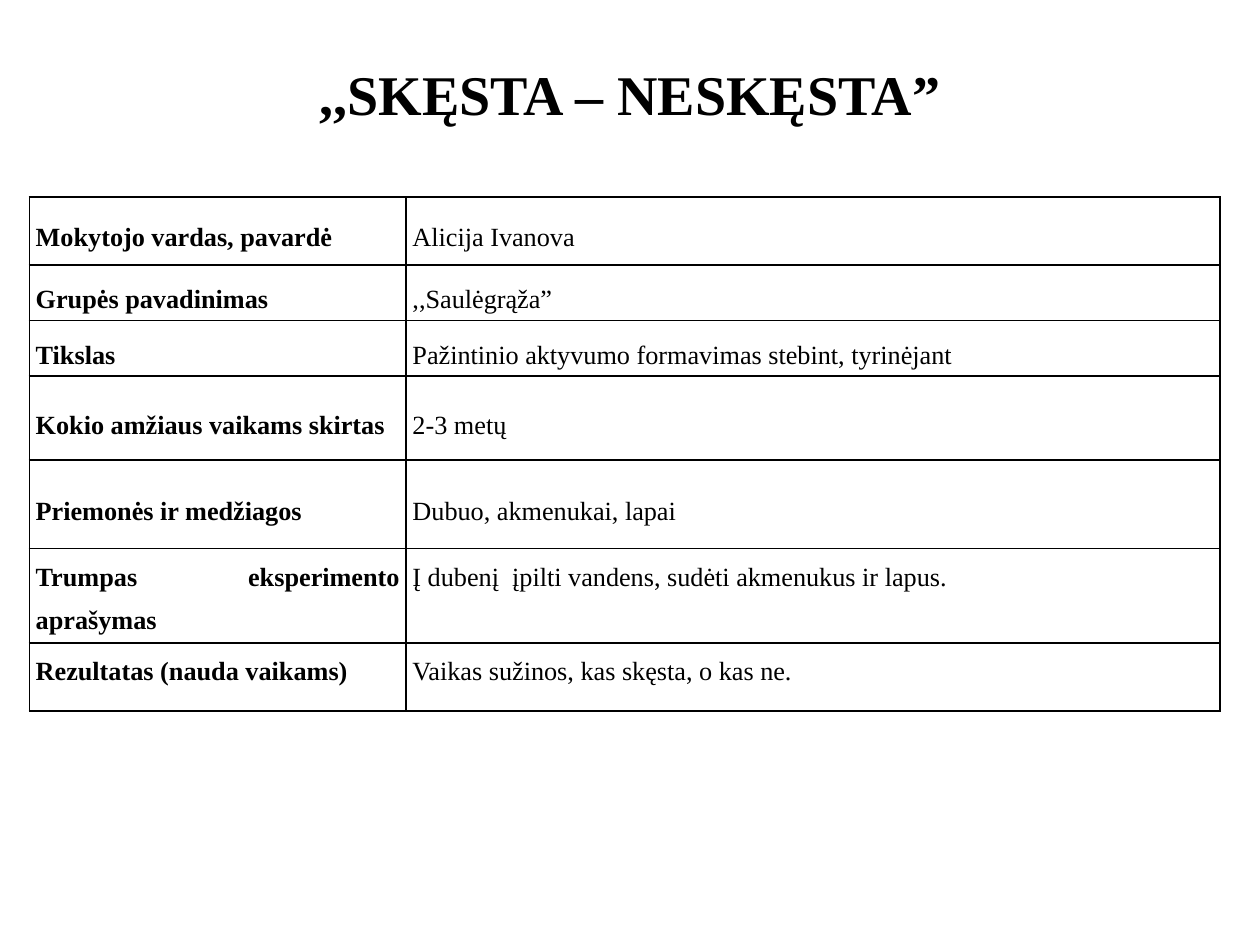
import dataclasses

import pptx
import pptx.dml.color
import pptx.enum.text
import pptx.oxml
import pptx.oxml.ns
import pptx.util

Pt = pptx.util.Pt
Align = pptx.enum.text.PP_ALIGN
Anchor = pptx.enum.text.MSO_ANCHOR
FONT = "Times New Roman"
BLACK = "000000"
WHITE = "FFFFFF"
WIDTHS = (215.3, 465.1)


@dataclasses.dataclass
class Row:
    label: str
    value: str
    height: float
    anchor: Anchor = Anchor.MIDDLE


ROWS = [
    Row("Mokytojo vardas, pavardė", "Alicija Ivanova", 38.9),
    Row("Grupės pavadinimas", ",,Saulėgrąža”", 31.7),
    Row("Tikslas", "Pažintinio aktyvumo formavimas stebint, tyrinėjant", 31.7),
    Row("Kokio amžiaus vaikams skirtas", "2-3 metų", 48.2),
    Row("Priemonės ir medžiagos", "Dubuo, akmenukai, lapai", 50.4),
    Row("Trumpas eksperimento aprašymas",
        "Į dubenį  įpilti vandens, sudėti akmenukus ir lapus.", 54, Anchor.TOP),
    Row("Rezultatas (nauda vaikams)",
        "Vaikas sužinos, kas skęsta, o kas ne.", 38.9, Anchor.TOP),
]


def color(code: str) -> pptx.dml.color.RGBColor:
    return pptx.dml.color.RGBColor.from_string(code)


def add_run(para, text: str, size: float, bold: bool) -> None:
    run = para.add_run()
    run.text = text
    run.font.name = FONT
    run.font.size = Pt(size)
    run.font.bold = bold
    run.font.color.rgb = color(BLACK)


def add_lines(cell) -> None:
    """Draw a thin line on each side; lines come before the fill."""
    props = cell._tc.get_or_add_tcPr()
    for place, side in enumerate(("lnL", "lnR", "lnT", "lnB")):
        line = pptx.oxml.parse_xml(
            f'<a:{side} {pptx.oxml.ns.nsdecls("a")} w="{Pt(1)}"><a:solidFill>'
            f'<a:srgbClr val="{BLACK}"/></a:solidFill></a:{side}>')
        props.insert(place, line)


def fill_cell(cell, text: str, bold: bool, anchor: Anchor) -> None:
    cell.margin_left = cell.margin_right = Pt(3.6)
    cell.margin_top = cell.margin_bottom = Pt(0)
    cell.vertical_anchor = anchor
    cell.fill.solid()
    cell.fill.fore_color.rgb = color(WHITE)
    add_lines(cell)
    para = cell.text_frame.paragraphs[0]
    para.alignment = Align.JUSTIFY
    para.line_spacing = 1.5
    add_run(para, text, 15, bold)


def add_title(slide, text: str) -> None:
    title = slide.shapes.title
    title.left, title.top = Pt(0), Pt(28)
    title.width, title.height = Pt(720), Pt(85)
    frame = title.text_frame
    frame.word_wrap = True
    frame.auto_size = pptx.enum.text.MSO_AUTO_SIZE.NONE
    frame.vertical_anchor = Anchor.TOP
    frame.margin_top = Pt(6)
    para = frame.paragraphs[0]
    para.alignment = Align.CENTER
    add_run(para, text, 32, True)


def add_grid(slide, rows: list[Row]) -> None:
    high = sum(row.height for row in rows)
    table = slide.shapes.add_table(
        len(rows), len(WIDTHS), Pt(16.8), Pt(112.5),
        Pt(sum(WIDTHS)), Pt(high)).table
    table.first_row = table.horz_banding = False
    for col, width in zip(table.columns, WIDTHS):
        col.width = Pt(width)
    for i, row in enumerate(rows):
        table.rows[i].height = Pt(row.height)
        fill_cell(table.cell(i, 0), row.label, True, row.anchor)
        fill_cell(table.cell(i, 1), row.value, False, row.anchor)


def main() -> None:
    deck = pptx.Presentation()
    deck.slide_width, deck.slide_height = Pt(720), Pt(540)
    # Title-only layout
    slide = deck.slides.add_slide(deck.slide_layouts[5])
    add_title(slide, ",,SKĘSTA – NESKĘSTA”")
    # Experiment card
    add_grid(slide, ROWS)
    deck.save("out.pptx")


if __name__ == "__main__":
    main()
